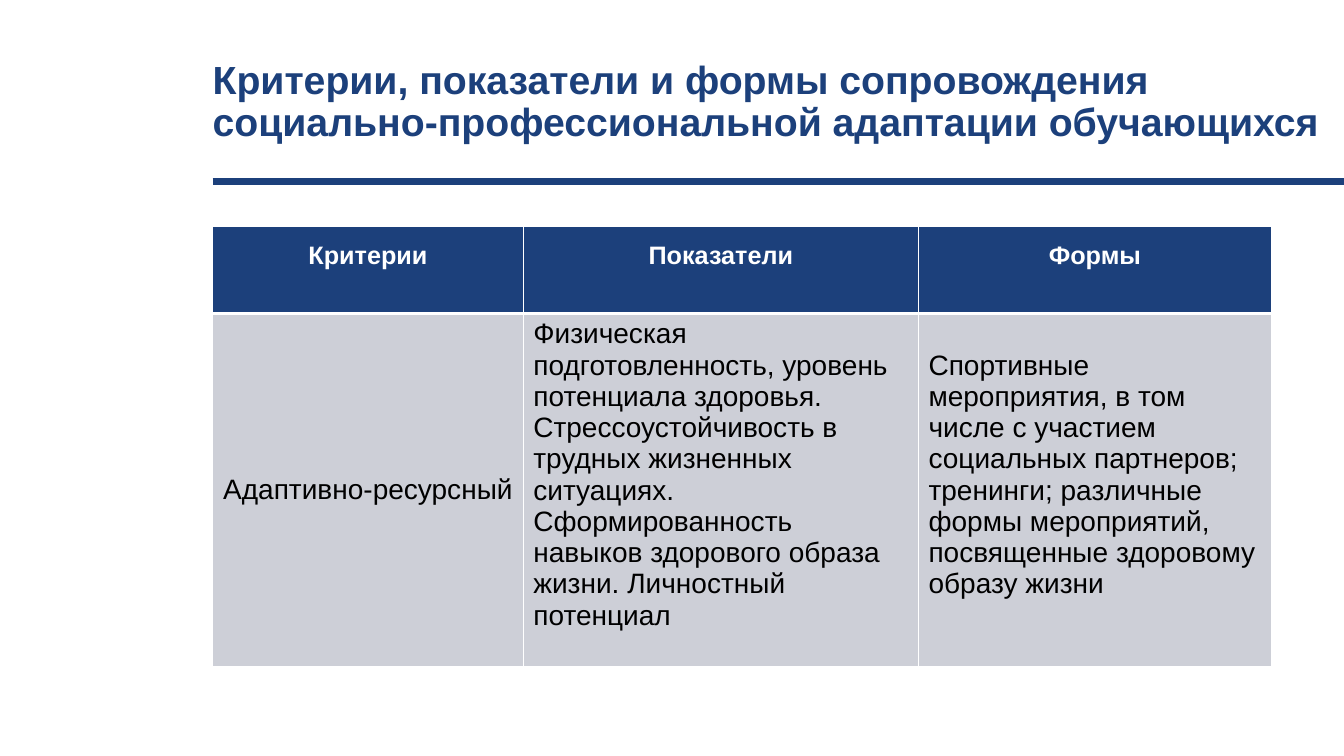
from lxml.etree import SubElement
from pptx import Presentation
from pptx.dml.color import RGBColor
from pptx.enum.shapes import MSO_CONNECTOR
from pptx.enum.text import MSO_ANCHOR, PP_ALIGN
from pptx.oxml.ns import qn
from pptx.util import Inches, Pt

NAVY, GREY, WHITE, BLACK = "1C407B", "CDCFD7", "FFFFFF", "000000"
LEFT = 2.11
SLIDE_WIDTH = 13.33

HEADERS = ["Критерии", "Показатели", "Формы"]
BODY = [
    ["Адаптивно-ресурсный"],
    ["Физическая подготовленность, уровень потенциала здоровья. "
     "Стрессоустойчивость в трудных жизненных ситуациях. "
     "Сформированность навыков здорового образа жизни. Личностный потенциал"],
    ["Спортивные мероприятия, в том числе с участием социальных партнеров;",
     "тренинги; различные формы мероприятий, посвященные здоровому образу жизни"],
]


def color(hex_string):
    return RGBColor.from_string(hex_string)


class SlideBuilder:
    font_name = "Arial"

    def __init__(self, slide):
        self.slide = slide

    def add_run(self, paragraph, text, size, hex_string, bold=False):
        run = paragraph.add_run()
        run.text = text
        run.font.name = self.font_name
        run.font.size = Pt(size)
        run.font.bold = bold
        run.font.color.rgb = color(hex_string)

    def title(self, text, left, top, width, height):
        shape = self.slide.shapes.title
        shape.left, shape.top = Inches(left), Inches(top)
        shape.width, shape.height = Inches(width), Inches(height)
        frame = shape.text_frame
        frame.margin_left = frame.margin_right = 0
        frame.margin_top = frame.margin_bottom = 0
        frame.vertical_anchor = MSO_ANCHOR.TOP
        frame.word_wrap = True
        paragraph = frame.paragraphs[0]
        paragraph.alignment = PP_ALIGN.LEFT
        paragraph.line_spacing = 0.9
        self.add_run(paragraph, text, 28, NAVY, bold=True)

    def rule(self, left, right, top, width):
        connector = self.slide.shapes.add_connector(
            MSO_CONNECTOR.STRAIGHT, Inches(left), Inches(top), Inches(right), Inches(top))
        connector.line.color.rgb = color(NAVY)
        connector.line.width = Pt(width)
        SubElement(connector._element.spPr, qn("a:effectLst"))

    def table(self, left, top, column_widths, row_heights):
        frame = self.slide.shapes.add_table(
            len(row_heights), len(column_widths), Inches(left), Inches(top),
            Inches(sum(column_widths)), Inches(sum(row_heights)))
        for column, width in zip(frame.table.columns, column_widths):
            column.width = Inches(width)
        for row, height in zip(frame.table.rows, row_heights):
            row.height = Inches(height)
        return frame.table

    def borders(self, cell, **widths):
        properties = cell._tc.get_or_add_tcPr()
        for position, (side, width) in enumerate(widths.items()):
            line = SubElement(properties, qn(f"a:{side}"), w=str(Pt(width)))
            fill = SubElement(line, qn("a:solidFill"))
            SubElement(fill, qn("a:srgbClr"), val=WHITE)
            properties.insert(position, line)

    def cell(self, cell, texts, fill, size, hex_string, bold=False,
             alignment=PP_ALIGN.LEFT, bottom_margin=0.05, top_line=1, bottom_line=1):
        cell.fill.solid()
        cell.fill.fore_color.rgb = color(fill)
        cell.vertical_anchor = MSO_ANCHOR.MIDDLE
        cell.margin_bottom = Inches(bottom_margin)
        frame = cell.text_frame
        for index, text in enumerate(texts):
            paragraph = frame.add_paragraph() if index else frame.paragraphs[0]
            paragraph.alignment = alignment
            self.add_run(paragraph, text, size, hex_string, bold)
        self.borders(cell, lnL=1, lnR=1, lnT=top_line, lnB=bottom_line)


def main():
    presentation = Presentation()
    presentation.slide_width = Inches(SLIDE_WIDTH)
    presentation.slide_height = Inches(7.5)
    builder = SlideBuilder(presentation.slides.add_slide(presentation.slide_layouts[5]))

    # Title and rule
    builder.rule(LEFT, SLIDE_WIDTH, 1.8, 4.5)
    builder.title("Критерии, показатели и формы сопровождения "
                  "социально-профессиональной адаптации обучающихся",
                  LEFT, 0.6, SLIDE_WIDTH - LEFT, 0.87)

    # Criteria table
    table = builder.table(LEFT, 2.25, [3.08, 3.92, 3.5], [0.86, 3.5])
    for column, header in enumerate(HEADERS):
        builder.cell(table.cell(0, column), [header], NAVY, 18, WHITE, bold=True,
                     alignment=PP_ALIGN.CENTER, bottom_margin=0.34, bottom_line=3)
    for column, texts in enumerate(BODY):
        is_criterion = column == 0
        builder.cell(table.cell(1, column), texts, GREY, 20, BLACK, top_line=3,
                     alignment=PP_ALIGN.CENTER if is_criterion else PP_ALIGN.LEFT,
                     bottom_margin=0.05 if is_criterion else 0.35)

    presentation.save("out.pptx")


if __name__ == "__main__":
    main()
